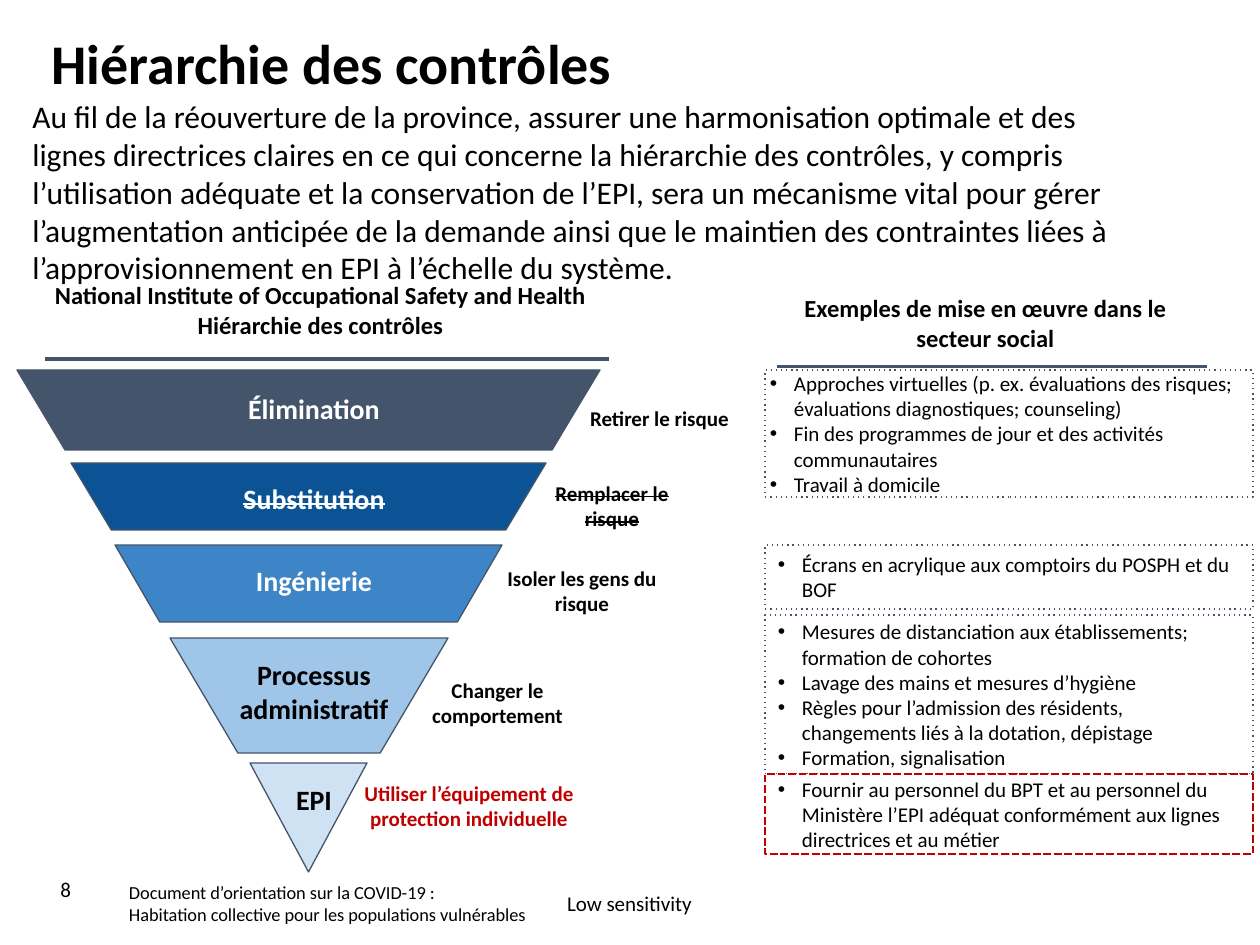
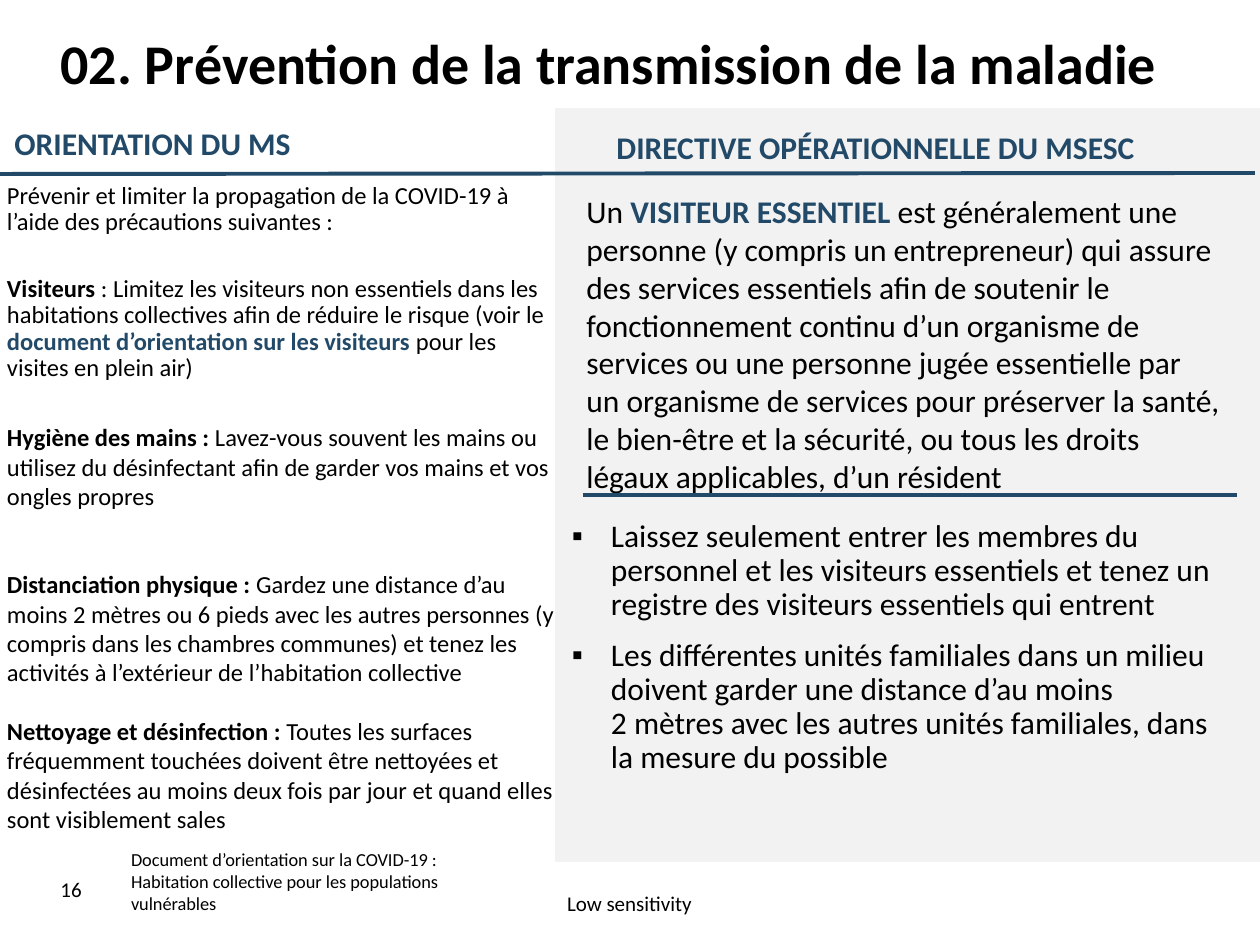
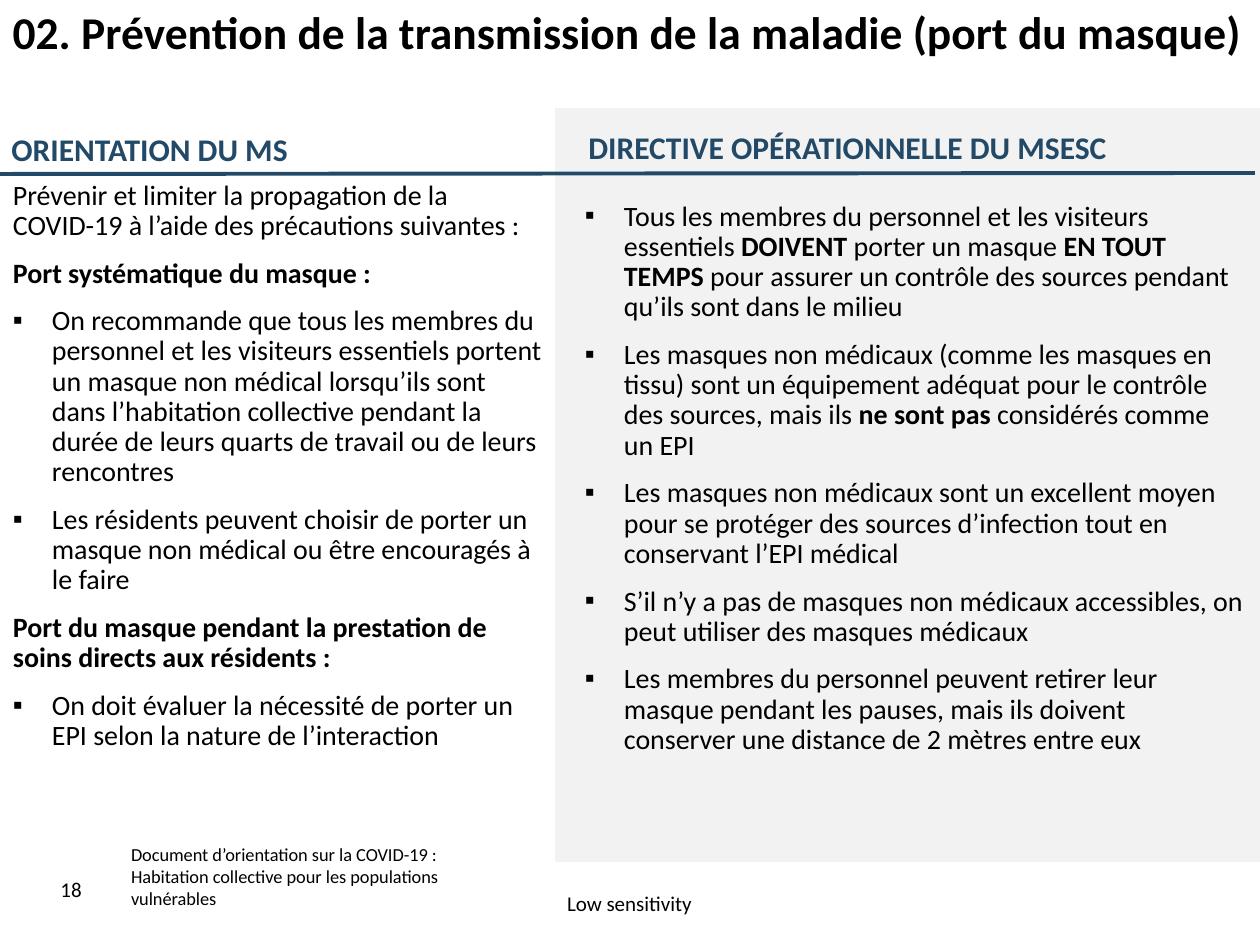
from dataclasses import dataclass

from lxml import etree
from pptx import Presentation
from pptx.dml.color import RGBColor
from pptx.enum.shapes import MSO_CONNECTOR, MSO_SHAPE
from pptx.enum.text import MSO_ANCHOR, MSO_AUTO_SIZE, PP_ALIGN
from pptx.oxml.ns import qn
from pptx.util import Emu, Pt

TOP, MIDDLE = MSO_ANCHOR.TOP, MSO_ANCHOR.MIDDLE
LEFT, CENTER = PP_ALIGN.LEFT, PP_ALIGN.CENTER
TRAPEZOID, TRIANGLE = MSO_SHAPE.TRAPEZOID, MSO_SHAPE.ISOSCELES_TRIANGLE
RECTANGLE, STRAIGHT = MSO_SHAPE.RECTANGLE, MSO_CONNECTOR.STRAIGHT

FONT = "Calibri"
COLORS = {
    "text": "000000",
    "white": "FFFFFF",
    "slate": "44546A",
    "navy": "224A68",
    "red": "C00000",
    "panel": "F2F2F2",
    "elimination": "44546A",
    "substitution": "0B5394",
    "engineering": "3D85C6",
    "process": "9FC5E8",
    "equipment": "CFE2F3",
}
PX_PER_INCH = 126
SLIDE_W, SLIDE_H = 1260, 945
PANEL_X, PANEL_Y, PANEL_H = 556, 109, 752
SQUARE, DOT = "▪", "•"
NO_BREAK_SPACE = chr(160)
FOOTER = ["Document d’orientation sur la COVID-19 :",
          "Habitation collective pour les populations vulnérables"]


@dataclass
class Para:
    """A paragraph: a string, or a list of strings and (text, colour) bold pieces."""
    pieces: object
    bullet: str = ""
    indent: int = 39
    before: float = 0
    spacing: float = 1
    bold: bool = False
    strike: bool = False


def px(*lengths):
    return [Emu(round(length * 914400 / PX_PER_INCH)) for length in lengths]


def rgb(name):
    return RGBColor.from_string(COLORS[name])


def strong(text, color="text"):
    return text, color


def add_bullet(paragraph, mark, indent):
    width = px(indent)[0]
    props = paragraph._p.get_or_add_pPr()
    props.set("marL", str(width))
    props.set("indent", str(-width))
    etree.SubElement(props, qn("a:buFont"), typeface="Arial")
    etree.SubElement(props, qn("a:buChar"), char=mark)


def write(frame, paragraphs, size, color="text", align=LEFT):
    for index, item in enumerate(paragraphs):
        para = item if isinstance(item, Para) else Para(item)
        line = frame.paragraphs[0] if index == 0 else frame.add_paragraph()
        if para.bullet:
            add_bullet(line, para.bullet, para.indent)
        line.alignment = align
        line.line_spacing = para.spacing
        line.space_before = Pt(para.before if index else 0)
        line.font.name = FONT
        line.font.size = Pt(size)
        line.font.bold = para.bold
        line.font.color.rgb = rgb(color)
        pieces = [para.pieces] if isinstance(para.pieces, str) else para.pieces
        for piece in pieces:
            run = line.add_run()
            if isinstance(piece, str):
                run.text = piece
            else:
                run.text, piece_color = piece
                run.font.bold = True
                run.font.color.rgb = rgb(piece_color)
            if para.strike:
                run._r.get_or_add_rPr().set("strike", "sngStrike")


def set_frame(frame, anchor=TOP, insets=None):
    frame.word_wrap = True
    frame.auto_size = MSO_AUTO_SIZE.NONE
    frame.vertical_anchor = anchor
    if insets:
        (frame.margin_left, frame.margin_top,
         frame.margin_right, frame.margin_bottom) = px(*insets)


def add_text(slide, box, paragraphs, size, color="text", align=LEFT,
             anchor=TOP, insets=None):
    frame = slide.shapes.add_textbox(*px(*box)).text_frame
    set_frame(frame, anchor, insets)
    write(frame, paragraphs, size, color, align)


def add_block(slide, kind, box, fill, line, width):
    block = slide.shapes.add_shape(kind, *px(*box))
    block.shadow.inherit = False
    if fill:
        block.fill.solid()
        block.fill.fore_color.rgb = rgb(fill)
    else:
        block.fill.background()
    block.line.color.rgb = rgb(line)
    block.line.width = Pt(width)
    return block


def add_rule(slide, x1, y1, x2, y2):
    rule = slide.shapes.add_connector(STRAIGHT, *px(x1, y1, x2, y2))
    rule.line.color.rgb = rgb("navy")
    rule.line.width = Pt(2.25)
    etree.SubElement(rule._element.spPr, qn("a:effectLst"))


def start_slide(deck, title, title_box, title_size, number, footer_box):
    slide = deck.slides.add_slide(deck.slide_layouts[5])
    heading = slide.shapes.title
    heading.left, heading.top, heading.width, heading.height = px(*title_box)
    set_frame(heading.text_frame)
    write(heading.text_frame, [Para(title, spacing=0.9, bold=True)], title_size)
    add_text(slide, (456, 878, 347, 50), ["Low sensitivity"], 12,
             align=CENTER, anchor=MIDDLE)
    add_text(slide, (48, 864, 71, 50), [number], 12, anchor=MIDDLE)
    add_text(slide, footer_box, FOOTER, 10.5, anchor=MIDDLE, insets=(13, 6, 13, 32))
    return slide


def add_underlined_heading(slide, box, lines):
    """One-cell table whose bottom border is the rule under the heading."""
    table = slide.shapes.add_table(1, 1, *px(*box)).table
    table.first_row = table.horz_banding = False
    cell = table.cell(0, 0)
    cell.fill.background()
    cell.margin_left = 0
    cell.margin_top, cell.margin_right, cell.margin_bottom = px(13, 13, 13)
    write(cell.text_frame, [Para(line, bold=True) for line in lines], 14, align=CENTER)
    border = etree.Element(qn("a:lnB"), w=str(Pt(2.25)))
    solid = etree.SubElement(border, qn("a:solidFill"))
    etree.SubElement(solid, qn("a:srgbClr"), val=COLORS["slate"])
    cell._tc.get_or_add_tcPr().insert(0, border)


def add_level(slide, kind, box, slant, fill, label, label_color, label_y,
              effect, effect_box, effect_color="text", strike=False):
    """One level of the inverted pyramid, with its effect to the right."""
    level = add_block(slide, kind, box, fill, "slate", 0.75)
    level.rotation = 180
    level.adjustments[0] = slant
    insets = (13, 13, 13, 13)
    add_text(slide, (154, label_y, 320, 49),
             [Para(line, bold=True, strike=strike) for line in label],
             16, label_color, CENTER, MIDDLE, insets)
    add_text(slide, (*effect_box, 49), [Para(effect, bold=True, strike=strike)],
             12, effect_color, CENTER, MIDDLE, insets)


def add_examples(slide, y, height, examples, inset=13, fill=None,
                 line="slate", width=0.75, dash="dot"):
    box = add_block(slide, RECTANGLE, (765, y, 488, height), fill, line, width)
    outline = box._element.spPr.find(qn("a:ln"))
    etree.SubElement(outline, qn("a:prstDash"), val=dash)
    set_frame(box.text_frame, MIDDLE, [inset] * 4)
    write(box.text_frame, [Para(text, DOT, 24) for text in examples], 12)


def build_hierarchy(deck):
    slide = start_slide(deck, "Hiérarchie des contrôles", (39, 30, 1171, 107), 32,
                        "8", (116, 891, 462, 50))
    levels = [
        (TRAPEZOID, (17, 370, 583, 80), 0.6, "elimination", ["Élimination"], "white", 384,
         "Retirer le risque", (575, 394, 169)),
        (TRAPEZOID, (71, 463, 475, 67), 0.6, "substitution", ["Substitution"], "white", 474,
         "Remplacer le risque", (525, 481, 174), "text", True),
        (TRAPEZOID, (115, 545, 387, 77), 0.58, "engineering", ["Ingénierie"], "white", 556,
         "Isoler les gens du risque", (483, 566, 198)),
        (TRAPEZOID, (170, 638, 278, 115), 0.59, "process", ["Processus", "administratif"],
         "text", 667, "Changer le comportement", (413, 678, 169)),
        (TRIANGLE, (250, 763, 117, 109), 0.5, "equipment", ["EPI"], "text", 775,
         "Utiliser l’équipement de protection individuelle", (345, 781, 248), "red"),
    ]
    for level in levels:
        add_level(slide, *level)

    add_underlined_heading(slide, (44, 268, 566, 91),
                           ["National Institute of Occupational Safety and Health",
                            "Hiérarchie des contrôles"])
    add_underlined_heading(slide, (776, 281, 432, 84),
                           ["Exemples de mise en œuvre dans le secteur social"])

    add_examples(slide, 370, 127, [
        "Approches virtuelles (p. ex. évaluations des risques; évaluations diagnostiques; "
        "counseling)",
        "Fin des programmes de jour et des activités communautaires",
        "Travail à domicile"], inset=5)
    add_examples(slide, 545, 64, ["Écrans en acrylique aux comptoirs du POSPH et du BOF"])
    add_examples(slide, 615, 159, [
        "Mesures de distanciation aux établissements; formation de cohortes",
        "Lavage des mains et mesures d’hygiène",
        "Règles pour l’admission des résidents, changements liés à la dotation, dépistage",
        "Formation, signalisation"])
    add_examples(slide, 774, 80, [
        "Fournir au personnel du BPT et au personnel du Ministère l’EPI adéquat conformément "
        "aux lignes directrices et au métier"],
        fill="white", line="red", width=1.5, dash="sysDash")

    add_text(slide, (20, 91, 1148, 204), [
        "Au fil de la réouverture de la province, assurer une harmonisation optimale et des "
        "lignes directrices claires en ce qui concerne la hiérarchie des contrôles, y compris "
        "l’utilisation adéquate et la conservation de l’EPI, sera un mécanisme vital pour gérer "
        "l’augmentation anticipée de la demande ainsi que le maintien des contraintes liées à "
        "l’approvisionnement en EPI à l’échelle du système."], 18)


def add_columns(slide, guidance_at, directive_at):
    """Grey right-hand panel, the two column headings and the rule under them."""
    add_block(slide, RECTANGLE,
              (PANEL_X, PANEL_Y, SLIDE_W - PANEL_X, PANEL_H), "panel", "panel", 1)
    add_rule(slide, 0, 174, 1255, 173)
    for heading, (x, y), width in (("ORIENTATION DU MS", guidance_at, 500),
                                   ("DIRECTIVE OPÉRATIONNELLE DU MSESC", directive_at, 600)):
        add_text(slide, (x, y, width, 50), [Para(heading, bold=True)], 18, "navy")


def point(pieces):
    return Para(pieces, SQUARE, before=10, spacing=0.9)


def build_prevention(deck):
    slide = start_slide(deck, "02. Prévention de la transmission de la maladie",
                        (48, 30, 1186, 67), 32, "16", (118, 869, 347, 50))
    add_columns(slide, (2, 118), (604, 122))
    add_text(slide, (2, 178, 561, 620), [
        Para("Prévenir et limiter la propagation de la COVID-19 à l’aide des précautions "
             "suivantes :", spacing=0.9),
        Para([strong("Visiteurs "),
              ": Limitez les visiteurs non essentiels dans les habitations collectives afin de "
              "réduire le risque (voir le ",
              strong("document d’orientation sur les visiteurs ", "navy"),
              "pour les visites en plein air)"], before=23, spacing=0.9),
        Para([strong("Hygiène des mains : "),
              "Lavez-vous souvent les mains ou utilisez du désinfectant afin de garder vos "
              "mains et vos ongles propres"], before=23),
        Para([strong("Distanciation physique : "),
              "Gardez une distance d’au moins 2 mètres ou 6 pieds avec les autres personnes "
              "(y compris dans les chambres communes) et tenez les activités à l’extérieur de "
              "l’habitation collective"], before=33.5),
        Para([strong("Nettoyage et désinfection :"),
              " Toutes les surfaces fréquemment touchées doivent être nettoyées et désinfectées "
              "au moins deux fois par jour et quand elles sont visiblement sales"], before=16.5),
    ], 14, insets=(5, 5, 5, 5))
    add_text(slide, (574, 186, 659, 318), [[
        "Un ", strong("VISITEUR ESSENTIEL ", "navy"),
        "est généralement une personne (y compris un entrepreneur) qui assure des services "
        "essentiels afin de soutenir le fonctionnement continu d’un organisme de services ou "
        "une personne jugée essentielle par un organisme de services pour préserver la santé, "
        "le bien-être et la sécurité, ou tous les droits légaux applicables, d’un résident"]], 18)
    add_rule(slide, 583, 495, 1237, 495)
    add_text(slide, (563, 515, 675, 289), [
        point("Laissez seulement entrer les membres du personnel et les visiteurs essentiels et "
              "tenez un registre des visiteurs essentiels qui entrent"),
        point("Les différentes unités familiales dans un milieu doivent garder une distance "
              f"d’au moins 2{NO_BREAK_SPACE}mètres avec les autres unités familiales, dans la "
              "mesure du possible"),
    ], 18, insets=(9, 5, 9, 5))


def build_masks(deck):
    slide = start_slide(deck, "02. Prévention de la transmission de la maladie (port du masque)",
                        (0, 4, 1265, 67), 26, "18", (118, 864, 347, 50))
    add_columns(slide, (-1, 124), (576, 122))
    add_text(slide, (0, 176, 554, 667), [
        Para("Prévenir et limiter la propagation de la COVID-19 à l’aide des précautions "
             "suivantes :", spacing=0.9),
        Para("Port systématique du masque :", before=10, spacing=0.9, bold=True),
        point("On recommande que tous les membres du personnel et les visiteurs essentiels "
              "portent un masque non médical lorsqu’ils sont dans l’habitation collective "
              "pendant la durée de leurs quarts de travail ou de leurs rencontres"),
        point("Les résidents peuvent choisir de porter un masque non médical ou être "
              "encouragés à le faire"),
        Para("Port du masque pendant la prestation de soins directs aux résidents :",
             before=10, spacing=0.9, bold=True),
        point("On doit évaluer la nécessité de porter un EPI selon la nature de l’interaction"),
    ], 16, insets=(13, 5, 9, 5))
    add_text(slide, (576, 197, 677, 626), [
        point(["Tous les membres du personnel et les visiteurs essentiels ", strong("DOIVENT"),
               " porter un masque ", strong("EN TOUT TEMPS "),
               "pour assurer un contrôle des sources pendant qu’ils sont dans le milieu"]),
        point(["Les masques non médicaux (comme les masques en tissu) sont un équipement adéquat "
               "pour le contrôle des sources, mais ils ", strong("ne sont pas "),
               "considérés comme un EPI"]),
        point("Les masques non médicaux sont un excellent moyen pour se protéger des sources "
              "d’infection tout en conservant l’EPI médical"),
        point("S’il n’y a pas de masques non médicaux accessibles, on peut utiliser des masques "
              "médicaux"),
        point("Les membres du personnel peuvent retirer leur masque pendant les pauses, mais ils "
              "doivent conserver une distance de 2 mètres entre eux"),
    ], 16, insets=(9, 5, 9, 5))


def main():
    deck = Presentation()
    deck.slide_width, deck.slide_height = px(SLIDE_W, SLIDE_H)
    build_hierarchy(deck)
    build_prevention(deck)
    build_masks(deck)
    deck.save("out.pptx")


if __name__ == "__main__":
    main()
